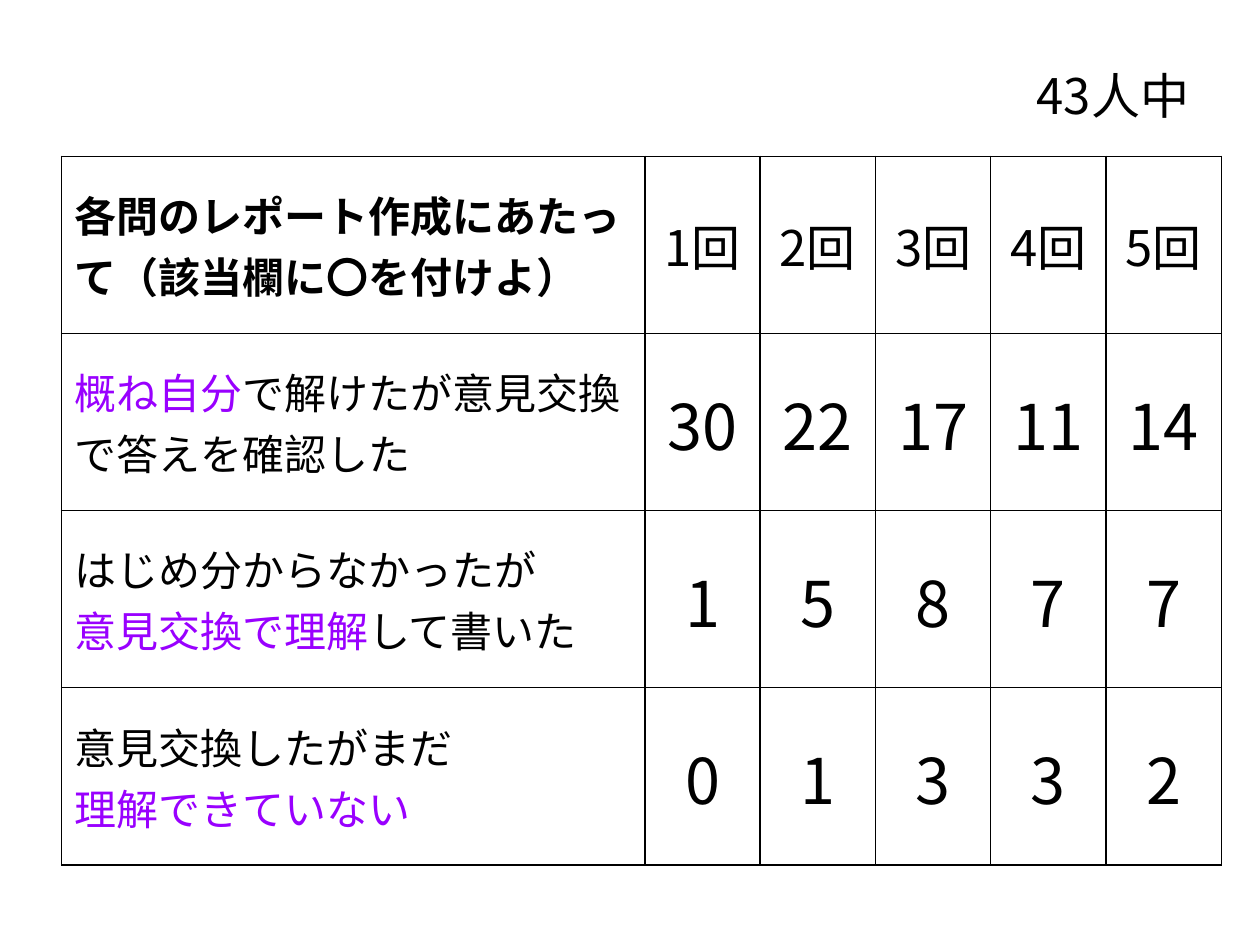
import pptx
import pptx.util
import pptx.dml.color
import pptx.enum.text
import pptx.oxml
import pptx.oxml.ns
from lxml import etree

Pt = pptx.util.Pt
qn = pptx.oxml.ns.qn
RGB = pptx.dml.color.RGBColor.from_string
ALIGN = pptx.enum.text.PP_ALIGN
MIDDLE = pptx.enum.text.MSO_ANCHOR.MIDDLE

FONT = "Noto Sans CJK JP"
COLORS = {"text": "000000", "accent": "9900FF", "fill": "FFFFFF", "border": "000000"}


def write(frame, paragraphs, size, bold=False, align=ALIGN.LEFT, spaced=True):
    """Fill a text frame; each paragraph is a list of (text, colour name) spans."""
    frame.word_wrap = True
    for index, spans in enumerate(paragraphs):
        para = frame.add_paragraph() if index else frame.paragraphs[0]
        para.alignment = align
        if spaced:
            before = etree.SubElement(para._p.get_or_add_pPr(), qn("a:spcBef"))
            etree.SubElement(before, qn("a:spcPct"), val="20000")
        for text, color in spans:
            span = para.add_run()
            span.text = text
            span.font.size = Pt(size)
            span.font.bold = bold
            span.font.color.rgb = RGB(COLORS[color])
            span.font.name = FONT
            etree.SubElement(span._r.get_or_add_rPr(), qn("a:ea"), typeface=FONT)


def style_cell(cell):
    cell.vertical_anchor = MIDDLE
    cell.fill.solid()
    cell.fill.fore_color.rgb = RGB(COLORS["fill"])
    properties = cell._tc.get_or_add_tcPr()
    for index, side in enumerate(("lnL", "lnR", "lnT", "lnB")):
        line = etree.Element(qn(f"a:{side}"), w=str(Pt(1)))
        fill = etree.SubElement(line, qn("a:solidFill"))
        etree.SubElement(fill, qn("a:srgbClr"), val=COLORS["border"])
        properties.insert(index, line)


deck = pptx.Presentation()
deck.slide_width, deck.slide_height = Pt(720), Pt(540)
page = deck.slides.add_slide(deck.slide_layouts[6])

questions = [
    [[("各問のレポート作成にあたって（該当欄に〇を付けよ）", "text")]],
    [[("概ね自分", "accent"), ("で解けたが意見交換で答えを確認した", "text")]],
    [[("はじめ分からなかったが", "text")],
     [("意見交換で理解", "accent"), ("して書いた", "text")]],
    [[("意見交換したがまだ", "text")], [("理解できていない", "accent")]],
]
answers = [
    ["1回", "2回", "3回", "4回", "5回"],
    [30, 22, 17, 11, 14],
    [1, 5, 8, 7, 7],
    [0, 1, 3, 3, 2],
]

table = page.shapes.add_table(4, 6, Pt(35.2), Pt(89.3), Pt(663), Pt(405)).table
table.first_row = table.horz_banding = False
for index, column in enumerate(table.columns):
    column.width = Pt(65.9) if index else Pt(333.3)
for row in table.rows:
    row.height = Pt(101.25)

for row, (question, values) in enumerate(zip(questions, answers)):
    header = row == 0
    cell = table.cell(row, 0)
    style_cell(cell)
    write(cell.text_frame, question, 24, bold=header, spaced=header)
    for column, value in enumerate(values, start=1):
        cell = table.cell(row, column)
        style_cell(cell)
        cell.margin_left = cell.margin_right = cell.margin_top = Pt(0.75)
        cell.margin_bottom = Pt(0)
        write(cell.text_frame, [[(str(value), "text")]], 28 if header else 36, align=ALIGN.CENTER)

box = page.shapes.add_textbox(Pt(585.4), Pt(33.8), Pt(113), Pt(41))
write(box.text_frame, [[("43人中", "text")]], 28)

deck.save("out.pptx")
